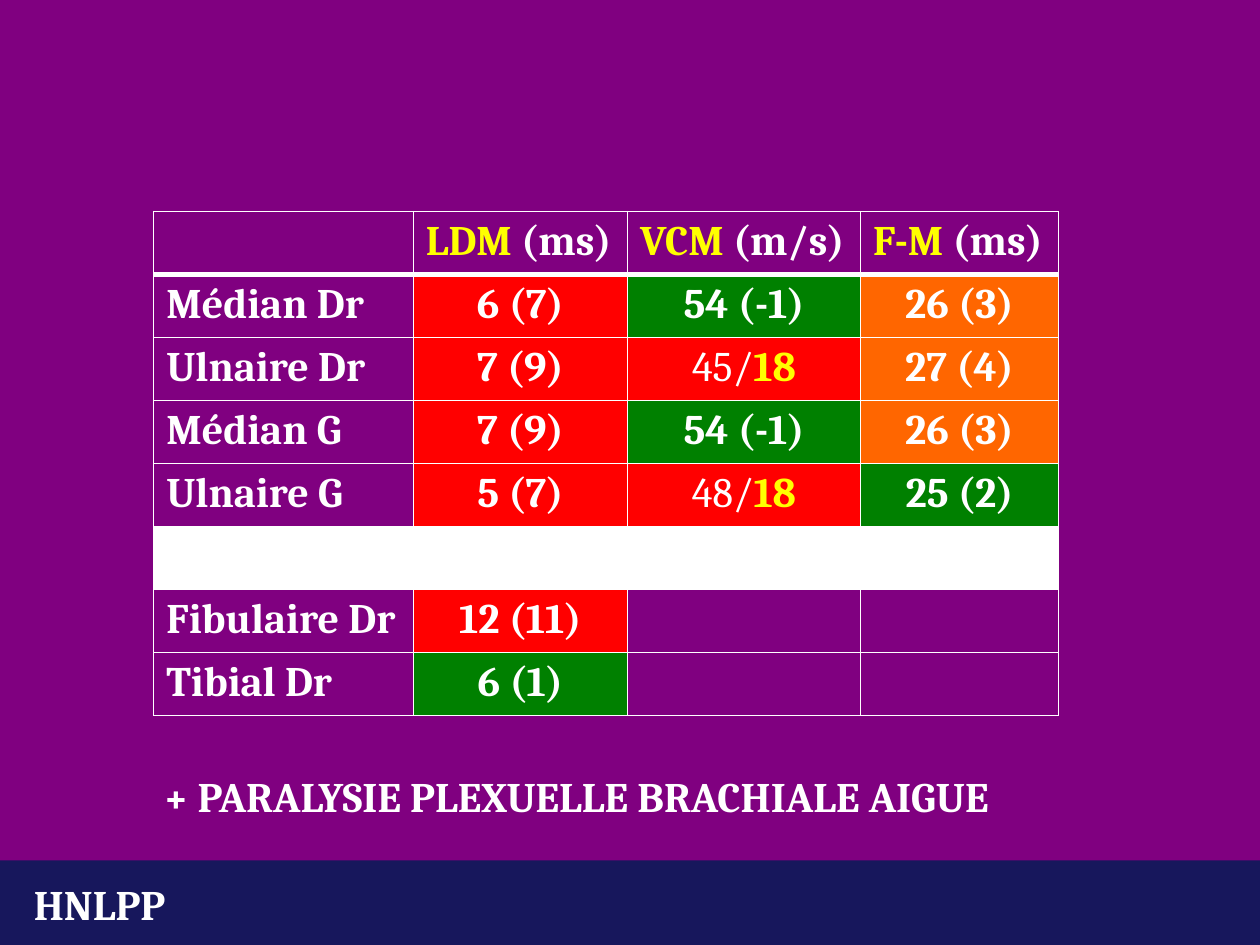
from dataclasses import dataclass

from lxml import etree
from pptx import Presentation
from pptx.dml.color import RGBColor
from pptx.enum import shapes, text
from pptx.oxml import ns
from pptx.util import Inches, Pt

COLORS = {
    "navy": "17175C",
    "purple": "800080",
    "white": "FFFFFF",
    "yellow": "FFFF00",
    "red": "FF0000",
    "green": "008000",
    "orange": "FF6600",
}
FONT = "Cambria"
COLUMN_WIDTHS = (2.06, 1.7, 1.85, 1.57)
ROW_HEIGHT = 0.5
THIN, THICK = 1, 3


@dataclass(frozen=True)
class Span:
    text: str
    color: str = "white"
    bold: bool = True


@dataclass(frozen=True)
class Entry:
    spans: tuple[Span, ...] = ()
    fill: str | None = None
    centered: bool = False


@dataclass(frozen=True)
class Caption:
    text: str
    left: float
    top: float
    width: float
    wrap: bool


def heading(measure: str, unit: str) -> Entry:
    return Entry((Span(measure, "yellow"), Span(f" ({unit})")))


def nerve(name: str) -> Entry:
    return Entry((Span(name),))


def value(result: str, fill: str) -> Entry:
    return Entry((Span(result),), fill, True)


def block(normal: str, slowed: str) -> Entry:
    spans = (Span(f"{normal}/", bold=False), Span(slowed, "yellow"))
    return Entry(spans, "red", True)


EMPTY = Entry()
SEPARATOR = Entry(fill="white")
ROWS = (
    (EMPTY, heading("LDM", "ms"), heading("VCM", "m/s"), heading("F-M", "ms")),
    (nerve("Médian Dr"), value("6 (7)", "red"), value("54 (-1)", "green"), value("26 (3)", "orange")),
    (nerve("Ulnaire Dr"), value("7 (9)", "red"), block("45", "18"), value("27 (4)", "orange")),
    (nerve("Médian G"), value("7 (9)", "red"), value("54 (-1)", "green"), value("26 (3)", "orange")),
    (nerve("Ulnaire G"), value("5 (7)", "red"), block("48", "18"), value("25 (2)", "green")),
    (SEPARATOR,) * len(COLUMN_WIDTHS),
    (nerve("Fibulaire Dr"), value("12 (11)", "red"), EMPTY, EMPTY),
    (nerve("Tibial Dr"), value("6 (1)", "green"), EMPTY, EMPTY),
)
CAPTIONS = (
    Caption("HNLPP", 0.17, 6.92, 4.92, True),
    Caption("+ PARALYSIE PLEXUELLE BRACHIALE AIGUE", 1.2, 6.07, 7.01, False),
)


def rgb(name: str) -> RGBColor:
    return RGBColor.from_string(COLORS[name])


def style_font(font, color: str = "white", bold: bool = True) -> None:
    font.name = FONT
    font.size = Pt(24)
    font.bold = bold
    font.color.rgb = rgb(color)


def draw_borders(cell, top: int, bottom: int) -> None:
    properties = cell._tc.get_or_add_tcPr()
    for side, width in (("L", THIN), ("R", THIN), ("T", top), ("B", bottom)):
        line = etree.SubElement(properties, ns.qn(f"a:ln{side}"), w=str(Pt(width)))
        fill = etree.SubElement(line, ns.qn("a:solidFill"))
        etree.SubElement(fill, ns.qn("a:srgbClr"), val=COLORS["white"])


def draw_entry(cell, entry: Entry) -> None:
    if entry.fill:
        cell.fill.solid()
        cell.fill.fore_color.rgb = rgb(entry.fill)
    else:
        cell.fill.background()
    paragraph = cell.text_frame.paragraphs[0]
    if entry.centered:
        paragraph.alignment = text.PP_ALIGN.CENTER
    for span in entry.spans:
        run = paragraph.add_run()
        run.text = span.text
        style_font(run.font, span.color, span.bold)


def draw_table(slide) -> None:
    frame = slide.shapes.add_table(
        len(ROWS), len(COLUMN_WIDTHS), Inches(1.22), Inches(1.68),
        Inches(sum(COLUMN_WIDTHS)), Inches(ROW_HEIGHT * len(ROWS)),
    )
    table = frame.table
    table.first_row = False
    table.horz_banding = False
    for column, width in zip(table.columns, COLUMN_WIDTHS):
        column.width = Inches(width)
    for row_index, entries in enumerate(ROWS):
        table.rows[row_index].height = Inches(ROW_HEIGHT)
        top = THICK if row_index == 1 else THIN
        bottom = THICK if row_index == 0 else THIN
        for column_index, entry in enumerate(entries):
            cell = table.cell(row_index, column_index)
            draw_borders(cell, top, bottom)
            draw_entry(cell, entry)


def draw_panel(slide) -> None:
    panel = slide.shapes.add_shape(
        shapes.MSO_SHAPE.RECTANGLE, Inches(0), Inches(0), Inches(10), Inches(6.83)
    )
    panel.shadow.inherit = False
    panel.fill.solid()
    panel.fill.fore_color.rgb = rgb("purple")
    panel.line.fill.background()


def draw_caption(slide, caption: Caption) -> None:
    box = slide.shapes.add_textbox(
        Inches(caption.left), Inches(caption.top), Inches(caption.width), Inches(0.5)
    )
    text_frame = box.text_frame
    text_frame.word_wrap = caption.wrap
    text_frame.auto_size = text.MSO_AUTO_SIZE.SHAPE_TO_FIT_TEXT
    text_frame.text = caption.text
    style_font(text_frame.paragraphs[0].runs[0].font)


def main() -> None:
    presentation = Presentation()
    presentation.slide_width = Inches(10)
    presentation.slide_height = Inches(7.5)
    slide = presentation.slides.add_slide(presentation.slide_layouts[6])
    slide.background.fill.solid()
    slide.background.fill.fore_color.rgb = rgb("navy")
    draw_panel(slide)
    draw_table(slide)
    for caption in CAPTIONS:
        draw_caption(slide, caption)
    presentation.save("out.pptx")


if __name__ == "__main__":
    main()
